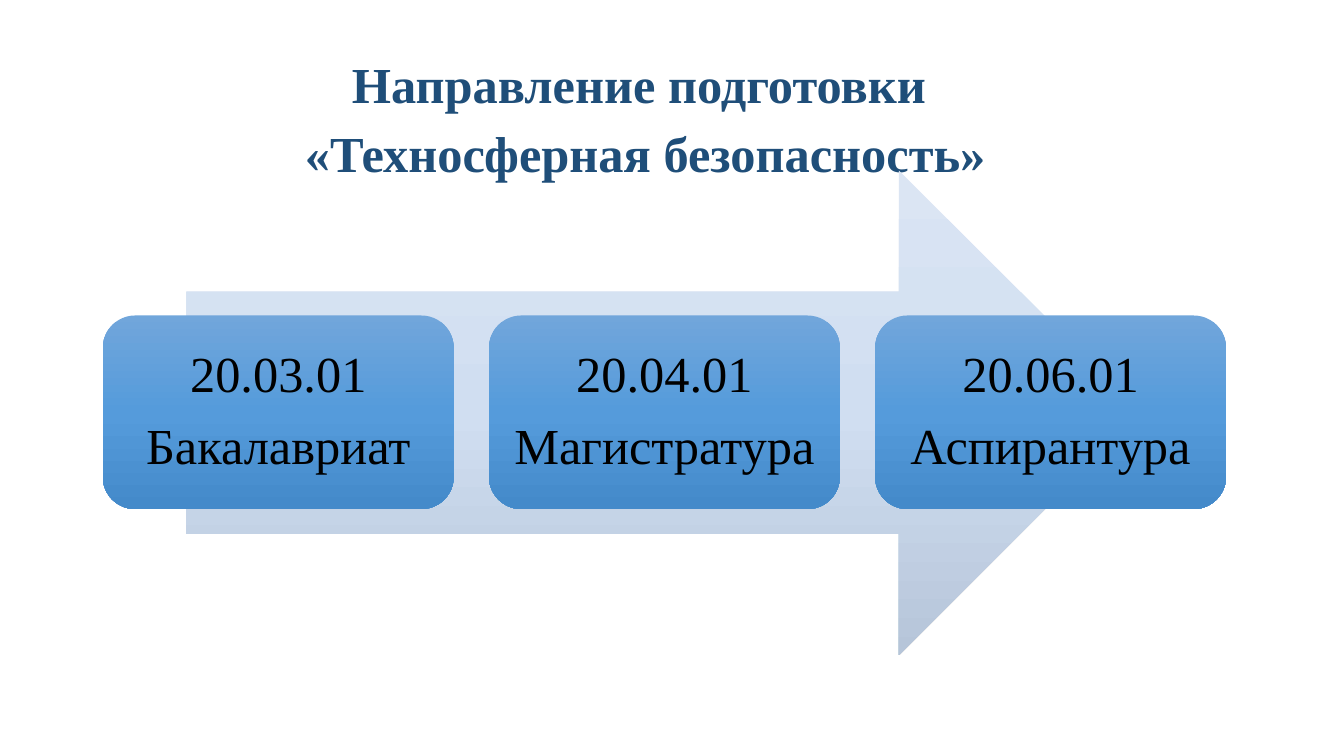
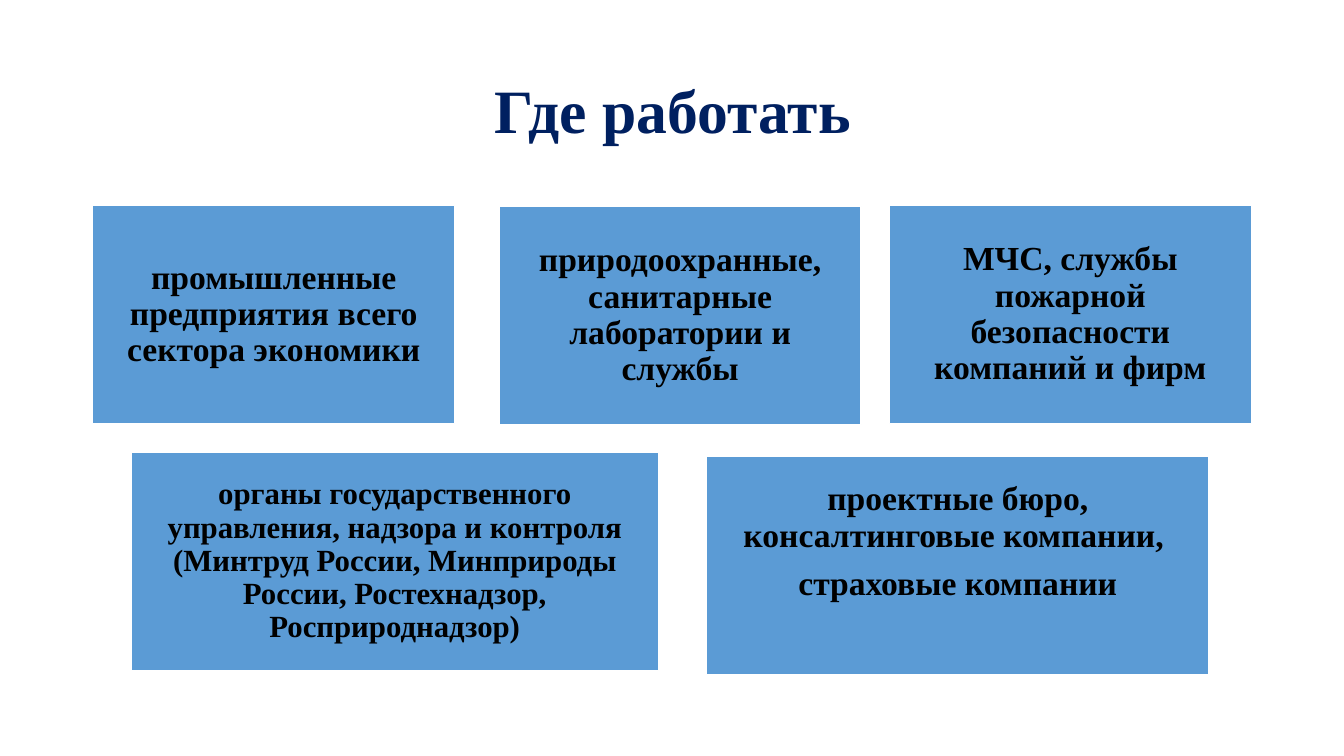
"""Build two slides on the Technosphere Safety degree programme and its careers."""
from copy import deepcopy

from pptx import Presentation
from pptx.dml.color import RGBColor
from pptx.enum.shapes import MSO_SHAPE
from pptx.enum.text import MSO_ANCHOR, PP_ALIGN
from pptx.oxml.ns import qn
from pptx.util import Inches, Pt

ARROW = MSO_SHAPE.RIGHT_ARROW
ROUNDED = MSO_SHAPE.ROUNDED_RECTANGLE
RECTANGLE = MSO_SHAPE.RECTANGLE
CENTER = PP_ALIGN.CENTER
TOP, MIDDLE = MSO_ANCHOR.TOP, MSO_ANCHOR.MIDDLE

FONT = "Times New Roman"
LINE_SPACING = 0.9
BLACK, WHITE = "000000", "FFFFFF"
BLUE, STEEL, NAVY = "5B9BD5", "1F4E79", "002060"
ARROW_SHADES = ("DBE5F3", "D0DEF1", "B6C5D9")
LEVEL_SHADES = ("71A6DB", "559BDB", "448ACA")

LEVELS = (
    ("20.03.01", "Бакалавриат"),
    ("20.04.01", "Магистратура"),
    ("20.06.01", "Аспирантура"),
)
LEVEL_LEFT, LEVEL_WIDTH, LEVEL_GAP = 1.02, 3.48, 0.35

EMPLOYER_HEIGHT = 2.16
EMPLOYERS = (
    (0.92, 2.04, 3.59, 24, ("промышленные предприятия всего сектора экономики",)),
    (4.95, 2.05, 3.59, 24, ("природоохранные, санитарные лаборатории и службы",)),
    (8.82, 2.04, 3.59, 24, ("МЧС, службы пожарной безопасности компаний и фирм",)),
    (1.3, 4.49, 5.23, 22, (
        "органы государственного управления, надзора и контроля "
        "(Минтруд России, Минприроды России, Ростехнадзор, Росприроднадзор)",)),
)
CONSULTING = (7.01, 4.53, 4.98, 24,
              ("проектные бюро, консалтинговые компании, ", "страховые компании"))


def rgb(value):
    """Turn a hex string into a colour."""
    return RGBColor.from_string(value)


def write(holder, paragraphs, size, color=BLACK, bold=False, anchor=MIDDLE,
          side=0.1, inset=0.1, gap=0.0):
    """Write centred paragraphs, with the gap in points between them."""
    frame = holder.text_frame
    frame.word_wrap = True
    frame.vertical_anchor = anchor
    frame.margin_left = frame.margin_right = Inches(side)
    frame.margin_top = frame.margin_bottom = Inches(inset)
    for index, text in enumerate(paragraphs):
        paragraph = frame.add_paragraph() if index else frame.paragraphs[0]
        paragraph.alignment = CENTER
        paragraph.line_spacing = LINE_SPACING
        paragraph.space_before = Pt(gap if index else 0)
        run = paragraph.add_run()
        run.text = text
        run.font.name, run.font.size, run.font.bold = FONT, Pt(size), bold
        run.font.color.rgb = rgb(color)


def add_title(slide, box, paragraphs, size, color, **layout):
    """Add a bold centred title."""
    title = slide.shapes.add_textbox(*map(Inches, box))
    write(title, paragraphs, size, color, bold=True, inset=0.05, **layout)


def add_block(slide, kind, box):
    """Add a preset shape without shadow or outline."""
    block = slide.shapes.add_shape(kind, *map(Inches, box))
    block.shadow.inherit = False
    block.line.fill.background()
    return block


def shade(block, colors):
    """Fill a shape with an even gradient from top to bottom."""
    block.fill.gradient()
    block.fill.gradient_angle = 270
    stop_list = block._element.spPr.find(".//" + qn("a:gsLst"))
    while len(stop_list) < len(colors):
        stop_list.append(deepcopy(stop_list[-1]))
    for index, (stop, color) in enumerate(zip(block.fill.gradient_stops, colors)):
        stop.color.rgb = rgb(color)
        stop.position = index / (len(colors) - 1)


def add_level(slide, left, lines):
    """Add a rounded block for one level of study."""
    level = add_block(slide, ROUNDED, (left, 3.13, LEVEL_WIDTH, 1.92))
    shade(level, LEVEL_SHADES)
    write(level, lines, 36, gap=12.6)


def add_employer(slide, left, top, width, size, lines, **layout):
    """Add a flat block for one group of employers."""
    employer = add_block(slide, RECTANGLE, (left, top, width, EMPLOYER_HEIGHT))
    employer.fill.solid()
    employer.fill.fore_color.rgb = rgb(BLUE)
    employer.line.color.rgb = rgb(WHITE)
    employer.line.width = Pt(1)
    write(employer, lines, size, bold=True, gap=8.4, **layout)


def build_levels(slide):
    """Show the three levels of study along an arrow."""
    add_title(slide, (0.65, 0.55, 11.5, 1.4),
              ("Направление подготовки ", "«Техносферная безопасность»"),
              36, STEEL, anchor=TOP, gap=10)
    shade(add_block(slide, ARROW, (1.85, 1.69, 9.47, 4.81)), ARROW_SHADES)
    for index, lines in enumerate(LEVELS):
        add_level(slide, LEVEL_LEFT + index * (LEVEL_WIDTH + LEVEL_GAP), lines)


def build_employers(slide):
    """Show where graduates can work."""
    add_title(slide, (0.92, 0.4, 11.5, 1.45), ("Где работать",), 44, NAVY)
    for employer in EMPLOYERS:
        add_employer(slide, *employer)
    add_employer(slide, *CONSULTING, anchor=TOP, inset=0.25)


def main():
    """Build and save the presentation."""
    deck = Presentation()
    deck.slide_width, deck.slide_height = Inches(13.33), Inches(7.5)
    blank = deck.slide_layouts[6]
    for build in (build_levels, build_employers):
        build(deck.slides.add_slide(blank))
    deck.save("out.pptx")


if __name__ == "__main__":
    main()
